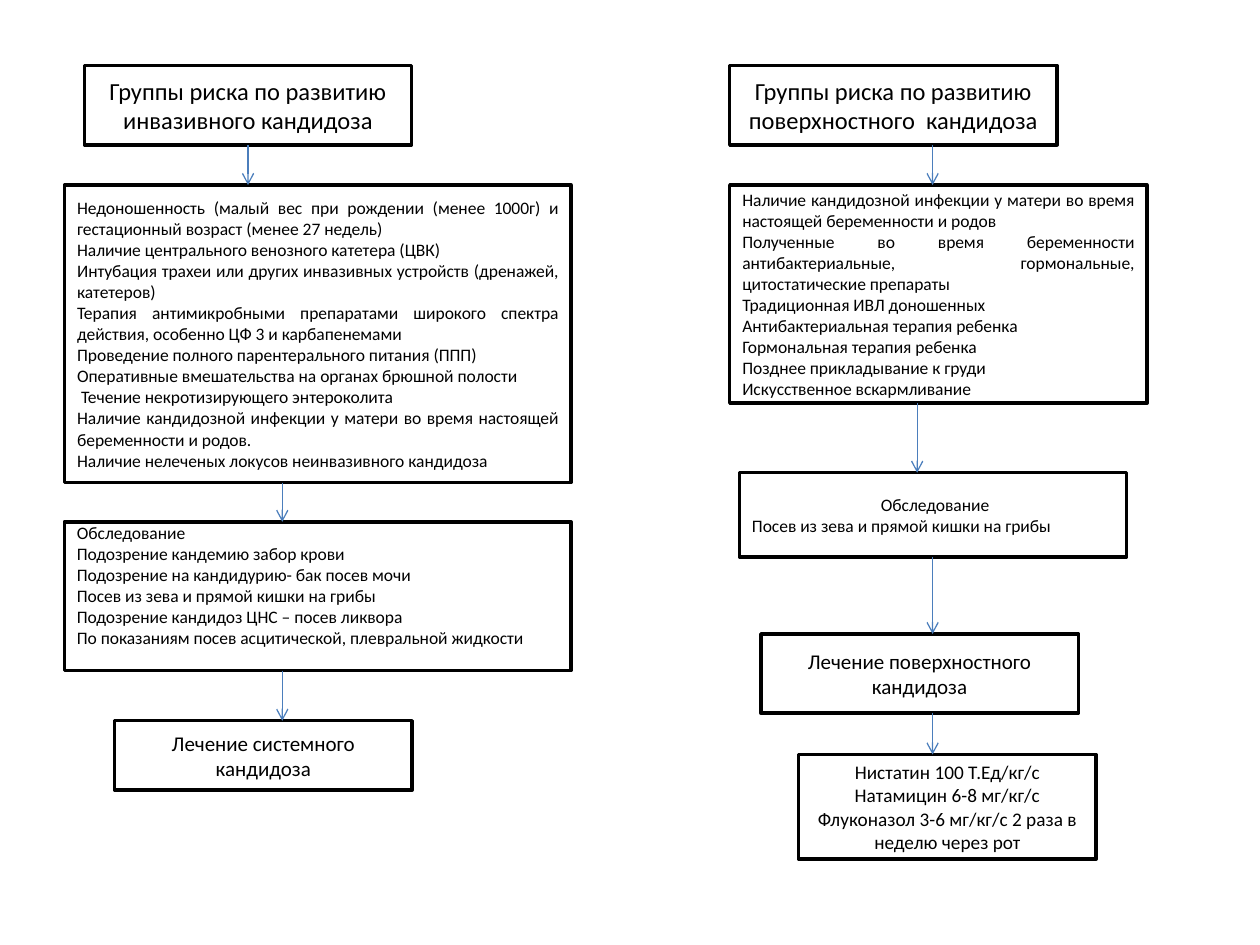
from dataclasses import dataclass
from itertools import pairwise

from pptx import Presentation
from pptx import util as u
from pptx.dml.color import RGBColor
from pptx.enum import shapes, text
from pptx.oxml import ns, xmlchemy


@dataclass(frozen=True)
class Theme:
    font: str = "Calibri"
    ink: RGBColor = RGBColor(0, 0, 0)
    paper: RGBColor = RGBColor(255, 255, 255)
    arrow: RGBColor = RGBColor(0x4B, 0x7E, 0xBC)
    heading: int = 14
    treatment: int = 12
    drugs: int = 11
    body: int = 10
    border: float = 2
    arrow_width: float = 0.75


THEME = Theme()
CENTER = text.PP_ALIGN.CENTER
JUSTIFY = text.PP_ALIGN.JUSTIFY


@dataclass
class Box:
    place: tuple  # left, top, width, height in centimetres
    lines: list
    size: int = THEME.body
    align: text.PP_ALIGN = CENTER
    placeholder: int | None = None
    first_align: text.PP_ALIGN | None = None
    at_top: bool = False


# Each column runs from top to bottom
INVASIVE = [
    Box((1.7, 1.32, 6.6, 1.6), ["Группы риска по развитию инвазивного кандидоза"],
        THEME.heading, placeholder=1),
    Box((1.3, 3.73, 10.21, 6), [
        "Недоношенность (малый вес при рождении (менее 1000г) и гестационный возраст (менее 27 недель)",
        "Наличие центрального венозного катетера (ЦВК)",
        "Интубация трахеи или других инвазивных устройств (дренажей, катетеров)",
        "Терапия антимикробными препаратами широкого спектра действия, особенно ЦФ 3 и карбапенемами",
        "Проведение полного парентерального питания (ППП)",
        "Оперативные вмешательства на органах брюшной полости",
        " Течение некротизирующего энтероколита",
        "Наличие кандидозной инфекции у матери во время настоящей беременности и родов.",
        "Наличие нелеченых локусов неинвазивного кандидоза",
    ], align=JUSTIFY, placeholder=2),
    Box((1.3, 10.52, 10.21, 3), [
        "Обследование",
        "Подозрение кандемию забор крови ",
        "Подозрение на кандидурию- бак посев мочи",
        "Посев из зева и прямой кишки на грибы",
        "Подозрение кандидоз ЦНС – посев ликвора",
        "По показаниям посев асцитической, плевральной жидкости",
    ], align=JUSTIFY, at_top=True),
    Box((2.31, 14.53, 6, 1.4), ["Лечение системного кандидоза"], THEME.treatment),
]
SUPERFICIAL = [
    Box((14.71, 1.32, 6.6, 1.6), ["Группы риска по развитию поверхностного  кандидоза"],
        THEME.heading, placeholder=3),
    Box((14.71, 3.73, 8.41, 4.4), [
        "Наличие кандидозной инфекции у матери во время настоящей беременности и родов",
        "Полученные во время беременности антибактериальные, гормональные, цитостатические препараты",
        "Традиционная ИВЛ доношенных",
        "Антибактериальная терапия ребенка",
        "Гормональная терапия ребенка",
        "Позднее прикладывание к груди",
        "Искусственное вскармливание",
    ], align=JUSTIFY, placeholder=4),
    Box((14.91, 9.53, 7.8, 1.7),
        [" Обследование", "Посев из зева и прямой кишки на грибы"],
        align=JUSTIFY, first_align=CENTER),
    Box((15.34, 12.78, 6.4, 1.6), ["Лечение поверхностного кандидоза"], THEME.treatment),
    Box((16.1, 15.21, 6, 2.11), [
        "Нистатин 100 Т.Ед/кг/с",
        "Натамицин 6-8 мг/кг/с",
        "Флуконазол 3-6 мг/кг/с 2 раза в неделю через рот",
    ], THEME.drugs),
]
# Horizontal place of the arrow after each box but the last
INVASIVE_ARROWS = [5, 5.69, 5.69]
SUPERFICIAL_ARROWS = [18.8, 18.49, 18.8, 18.8]


def add_paragraph(paragraph, line, size, align):
    paragraph.alignment = align
    paragraph.space_before = u.Pt(0)
    properties = paragraph._p.get_or_add_pPr()
    properties.set("marL", "0")
    properties.set("indent", "0")
    properties.append(xmlchemy.OxmlElement("a:buNone"))
    run = paragraph.add_run()
    run.text = line
    run.font.name = THEME.font
    run.font.size = u.Pt(size)
    run.font.bold = False
    run.font.color.rgb = THEME.ink


def add_box(slide, box):
    place = [u.Cm(value) for value in box.place]
    if box.placeholder is None:
        shape = slide.shapes.add_shape(shapes.MSO_SHAPE.RECTANGLE, *place)
        shape.shadow.inherit = False
    else:
        shape = slide.placeholders[box.placeholder]
        shape.left, shape.top, shape.width, shape.height = place
    shape.fill.solid()
    shape.fill.fore_color.rgb = THEME.paper
    shape.line.color.rgb = THEME.ink
    shape.line.width = u.Pt(THEME.border)

    frame = shape.text_frame
    frame.word_wrap = True
    frame.auto_size = text.MSO_AUTO_SIZE.NONE
    frame.vertical_anchor = text.MSO_ANCHOR.MIDDLE
    if box.at_top:
        frame.vertical_anchor = text.MSO_ANCHOR.TOP
        frame.margin_top = 0
    for index, line in enumerate(box.lines):
        paragraph = frame.add_paragraph() if index else frame.paragraphs[0]
        align = box.align if index else box.first_align or box.align
        add_paragraph(paragraph, line, box.size, align)


def add_arrow(slide, x, top, bottom):
    arrow = slide.shapes.add_connector(
        shapes.MSO_CONNECTOR.STRAIGHT, u.Cm(x), u.Cm(top), u.Cm(x), u.Cm(bottom))
    arrow.line.color.rgb = THEME.arrow
    arrow.line.width = u.Pt(THEME.arrow_width)
    head = xmlchemy.OxmlElement("a:tailEnd")
    head.set("type", "arrow")
    properties = arrow._element.spPr
    properties.find(ns.qn("a:ln")).append(head)
    properties.append(xmlchemy.OxmlElement("a:effectLst"))


def add_column(slide, boxes, arrow_places):
    for box in boxes:
        add_box(slide, box)
    # Arrows fill the gaps between neighbouring boxes
    for x, (upper, lower) in zip(arrow_places, pairwise(boxes)):
        _, top, _, height = upper.place
        add_arrow(slide, x, top + height, lower.place[1])


def main():
    presentation = Presentation()
    presentation.slide_width, presentation.slide_height = u.Cm(25.4), u.Cm(19.05)
    # The comparison layout has two headings and two lists
    slide = presentation.slides.add_slide(presentation.slide_layouts[4])
    title = slide.shapes.title._element
    title.getparent().remove(title)

    add_column(slide, INVASIVE, INVASIVE_ARROWS)
    add_column(slide, SUPERFICIAL, SUPERFICIAL_ARROWS)
    presentation.save("out.pptx")


if __name__ == "__main__":
    main()
